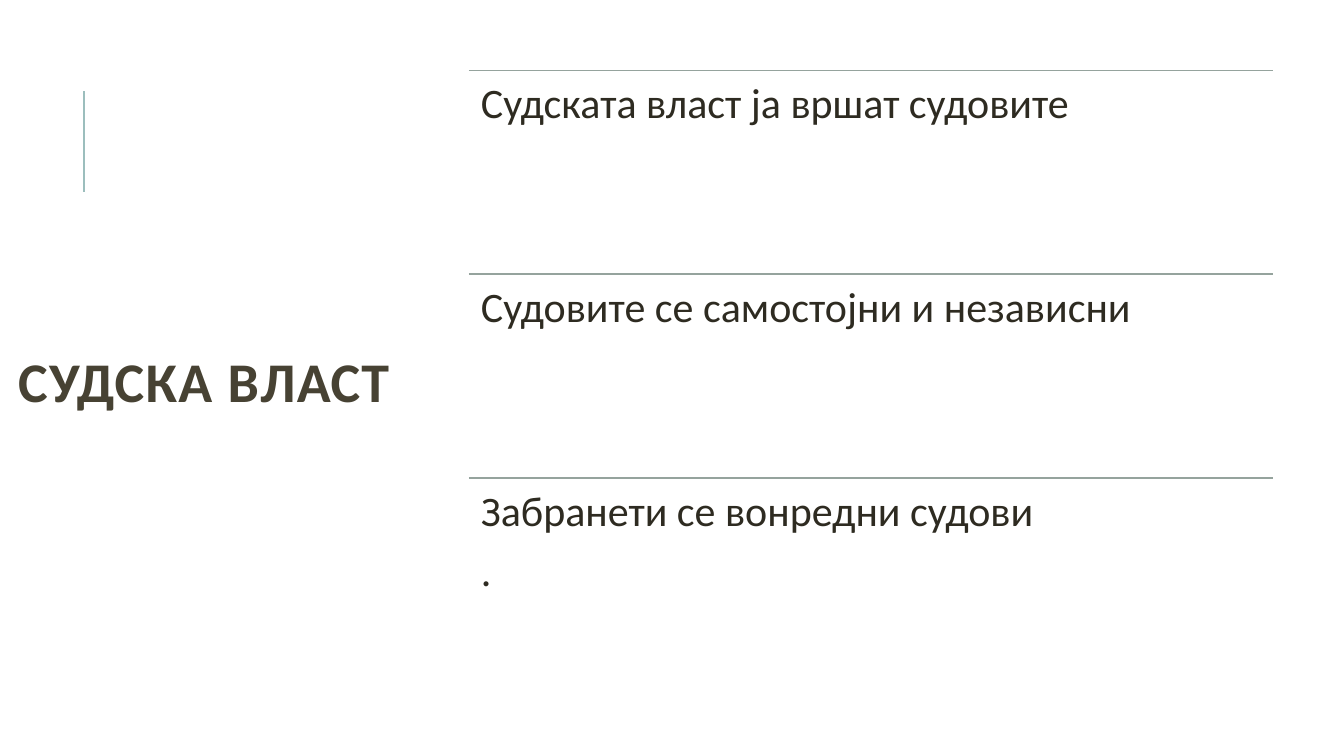
from pptx import Presentation, util as u
from pptx.dml.color import RGBColor
from pptx.enum import shapes, text
from pptx.oxml.ns import qn

WIDTH, HEIGHT = 13.33, 7.5
STATEMENTS = [
    ["Судската власт ја вршат судовите"],
    ["Судовите се самостојни и независни"],
    ["Забранети се вонредни судови", "."],
]


def colour(value):
    return RGBColor.from_string(value)


class Page:
    """Holds the style and the current slide, with lengths as shares of its size."""

    font = "Calibri"
    title_ink, body_ink = "474233", "2E2B21"
    accent, divider = "9CBEBD", "95A39D"

    def __init__(self, deck):
        self.width, self.height = deck.slide_width, deck.slide_height
        self.slide = deck.slides.add_slide(deck.slide_layouts[5])

    def place(self, across, down):
        return round(across * self.width), round(down * self.height)

    def line(self, start, end, ink, weight):
        line = self.slide.shapes.add_connector(
            shapes.MSO_CONNECTOR.STRAIGHT, *self.place(*start), *self.place(*end))
        line.line.color.rgb = colour(ink)
        line.line.width = u.Pt(weight)
        line._element.spPr.append(line._element.makeelement(qn("a:effectLst"), {}))

    def add_span(self, paragraph, words, size, ink, spacing, bold=False):
        paragraph.alignment = text.PP_ALIGN.LEFT
        paragraph.line_spacing = spacing
        span = paragraph.add_run()
        span.text = words
        span.font.name = self.font
        span.font.size = u.Pt(size)
        span.font.bold = bold
        span.font.color.rgb = colour(ink)
        return span

    def title(self, corner, size, words):
        box = self.slide.shapes.title
        box.left, box.top = self.place(*corner)
        box.width, box.height = self.place(*size)
        frame = box.text_frame
        frame.word_wrap = True
        frame.auto_size = text.MSO_AUTO_SIZE.NONE
        frame.vertical_anchor = text.MSO_ANCHOR.MIDDLE
        span = self.add_span(frame.paragraphs[0], words, 40, self.title_ink, 0.8, True)
        span._r.get_or_add_rPr().set("spc", "100")

    def statement(self, corner, size, lines):
        left, top = corner
        self.line(corner, (left + size[0], top), self.divider, 1.25)
        box = self.slide.shapes.add_textbox(*self.place(*corner), *self.place(*size))
        frame = box.text_frame
        frame.word_wrap = True
        frame.margin_left = frame.margin_right = u.Inches(0.12)
        frame.margin_top = frame.margin_bottom = u.Inches(0.12)
        for index, words in enumerate(lines):
            paragraph = frame.add_paragraph() if index else frame.paragraphs[0]
            paragraph.space_after = u.Pt(10.5)
            self.add_span(paragraph, words, 30, self.body_ink, 0.9)


def main():
    deck = Presentation()
    deck.slide_width, deck.slide_height = u.Inches(WIDTH), u.Inches(HEIGHT)
    page = Page(deck)
    page.line((0.83 / WIDTH, 1.9 / HEIGHT), (0.83 / WIDTH, 0.9 / HEIGHT), page.accent, 1.5)
    page.title((0.08 / WIDTH, 0.78 / HEIGHT), (4.06 / WIDTH, 6.11 / HEIGHT), "СУДСКА ВЛАСТ")
    row = 2.02 / HEIGHT
    for index, lines in enumerate(STATEMENTS):
        corner = (4.65 / WIDTH, 0.7 / HEIGHT + index * row)
        page.statement(corner, (7.98 / WIDTH, row), lines)
    deck.save("out.pptx")


if __name__ == "__main__":
    main()
